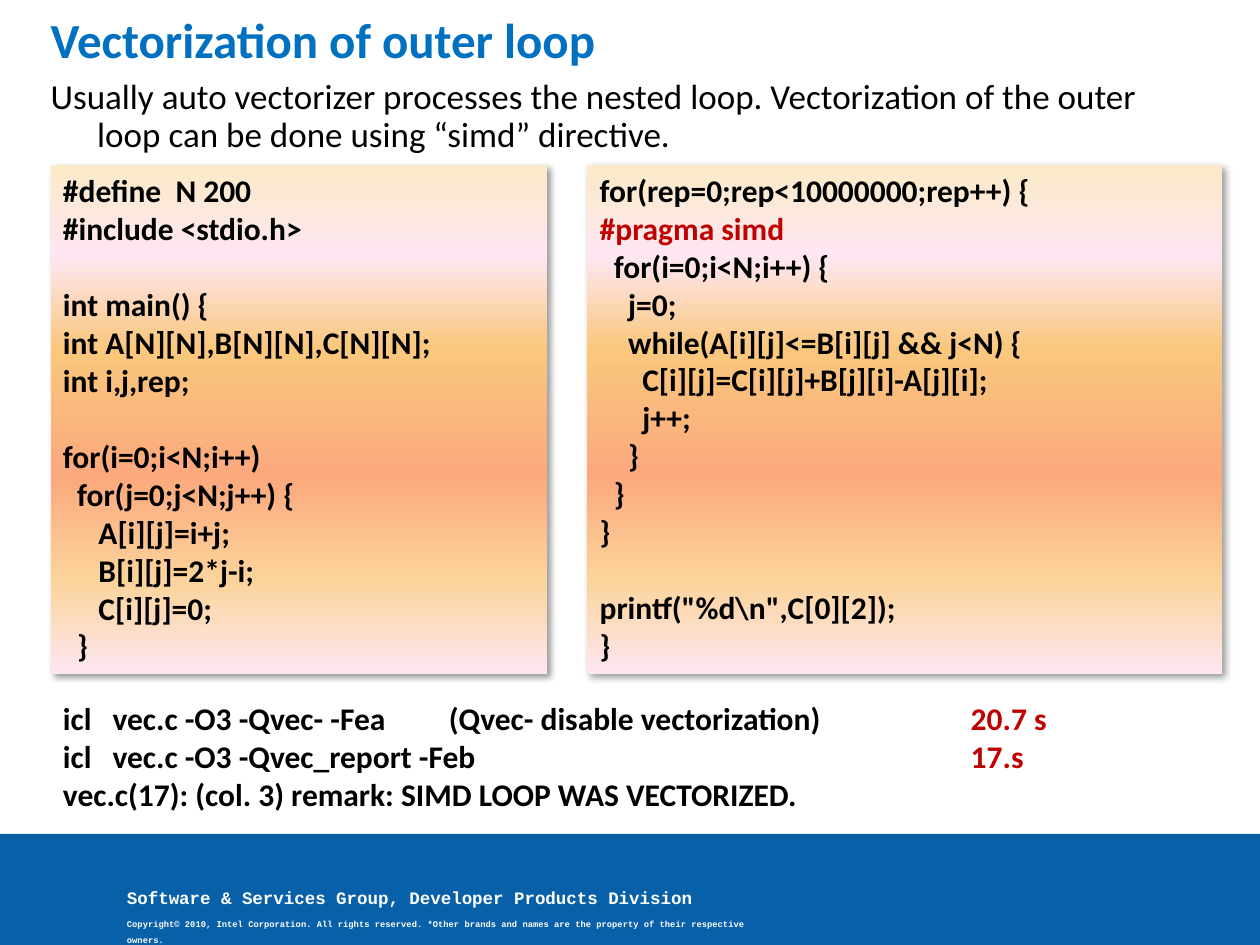
from dataclasses import dataclass

from lxml import etree
from pptx import Presentation
from pptx.dml.color import RGBColor
from pptx.enum.shapes import MSO_SHAPE
from pptx.enum.text import MSO_ANCHOR, MSO_AUTO_SIZE, PP_ALIGN
from pptx.oxml.ns import qn
from pptx.util import Cm, Pt

RECTANGLE = MSO_SHAPE.RECTANGLE
TOP = MSO_ANCHOR.TOP
LEFT = PP_ALIGN.LEFT
NO_FIT = MSO_AUTO_SIZE.NONE
GROW = MSO_AUTO_SIZE.SHAPE_TO_FIT_TEXT

COLORS = {
    "title": "0070C0",
    "text": "000000",
    "highlight": "C00000",
    "footer": "0860A8",
    "footer_text": "FFFFFF",
    "shadow": "000000",
}
GRADIENT = [(0, "FBEAC7"), (18, "FEE7F2"), (36, "FAC77D"),
            (61, "FBA97D"), (82, "FBD49C"), (100, "FEE7F2")]
MARGIN = Cm(1.02)
CODE_LINE = Pt(22)


@dataclass
class CodePanel:
    left: Cm
    width: Cm
    code: str


@dataclass
class Command:
    text: str
    timing: str = ""


SETUP_CODE = """#define  N 200
#include <stdio.h>

int main() {
int A[N][N],B[N][N],C[N][N];
int i,j,rep;

for(i=0;i<N;i++)
  for(j=0;j<N;j++) {
     A[i][j]=i+j;
     B[i][j]=2*j-i;
     C[i][j]=0;
  }"""
LOOP_CODE = r"""for(rep=0;rep<10000000;rep++) {
#pragma simd
  for(i=0;i<N;i++) {
    j=0;
    while(A[i][j]<=B[i][j] && j<N) {
      C[i][j]=C[i][j]+B[j][i]-A[j][i];
      j++;
    }
  }
}

printf("%d\n",C[0][2]);
}"""
PANELS = [
    CodePanel(MARGIN, Cm(10.01), SETUP_CODE),
    CodePanel(Cm(11.84), Cm(12.8), LOOP_CODE),
]
COMMANDS = [
    Command("icl\tvec.c -O3 -Qvec- -Fea\t(Qvec- disable vectorization)\t", "20.7 s"),
    Command("icl\tvec.c -O3 -Qvec_report -Feb\t", "17.s"),
    Command("vec.c(17): (col. 3) remark: SIMD LOOP WAS VECTORIZED."),
]
COMMAND_TABS = [Cm(1), Cm(7.78), Cm(18.3)]


def add_run(paragraph, text: str, *, size: float = 18, color: str = "text",
            bold: bool = True, font: str = "Calibri") -> None:
    run = paragraph.add_run()
    run.text = text
    run.font.size = Pt(size)
    run.font.name = font
    run.font.bold = bold
    run.font.color.rgb = RGBColor.from_string(COLORS[color])


def paragraph_at(frame, index: int):
    paragraph = frame.paragraphs[0] if index == 0 else frame.add_paragraph()
    paragraph.alignment = LEFT
    return paragraph


def place(shape, left: int, top: int, width: int, height: int) -> None:
    shape.left, shape.top, shape.width, shape.height = left, top, width, height


def fill_placeholder(placeholder, text: str, **text_format) -> None:
    frame = placeholder.text_frame
    frame.margin_left = frame.margin_right = frame.margin_top = frame.margin_bottom = 0
    frame.vertical_anchor = TOP
    frame.auto_size = NO_FIT
    frame.word_wrap = True
    paragraph = paragraph_at(frame, 0)
    paragraph.line_spacing = 0.9
    paragraph.space_before = Pt(0)
    properties = paragraph._p.get_or_add_pPr()
    properties.set("marL", str(Cm(0.94)))
    properties.set("indent", str(-Cm(0.94)))
    etree.SubElement(properties, qn("a:buNone"))
    add_run(paragraph, text, **text_format)


def add_color(parent, color: str):
    return etree.SubElement(parent, qn("a:srgbClr"), val=color)


def paint_panel(shape) -> None:
    shape.line.fill.background()
    shape.fill.gradient()
    shape.fill.gradient_angle = 270
    properties = shape._element.spPr
    stops = properties.find(".//" + qn("a:gsLst"))
    for stop in list(stops):
        stops.remove(stop)
    for percent, color in GRADIENT:
        add_color(etree.SubElement(stops, qn("a:gs"), pos=str(percent * 1000)), color)
    shape.shadow.inherit = False
    shadow = etree.SubElement(
        properties.find(qn("a:effectLst")), qn("a:outerShdw"),
        blurRad=str(Pt(4)), dist=str(Pt(3)), dir=str(45 * 60000),
        algn="tl", rotWithShape="0")
    etree.SubElement(add_color(shadow, COLORS["shadow"]), qn("a:alpha"), val="40000")


def add_code_panel(slide, panel: CodePanel) -> None:
    shape = slide.shapes.add_shape(RECTANGLE, panel.left, Cm(3.33), panel.width, Cm(10.26))
    paint_panel(shape)
    frame = shape.text_frame
    frame.word_wrap = True
    frame.vertical_anchor = TOP
    frame.auto_size = GROW
    index = 0
    for block_number, block in enumerate(panel.code.split("\n\n")):
        for line_number, line in enumerate(block.split("\n")):
            paragraph = paragraph_at(frame, index)
            if block_number and line_number == 0:
                paragraph.space_before = CODE_LINE
            add_run(paragraph, line,
                    color="highlight" if line.startswith("#pragma") else "text")
            index += 1


def add_commands(slide, commands: list[Command]) -> None:
    frame = slide.shapes.add_textbox(MARGIN, Cm(13.97), Cm(24.38), Cm(2.57)).text_frame
    frame.word_wrap = True
    frame.auto_size = GROW
    for index, command in enumerate(commands):
        paragraph = paragraph_at(frame, index)
        tabs = etree.SubElement(paragraph._p.get_or_add_pPr(), qn("a:tabLst"))
        for position in COMMAND_TABS:
            etree.SubElement(tabs, qn("a:tab"), pos=str(position), algn="l")
        add_run(paragraph, command.text)
        if command.timing:
            add_run(paragraph, command.timing, color="highlight")


def add_footer(slide) -> None:
    band = slide.shapes.add_shape(RECTANGLE, 0, Cm(16.81), Cm(25.4), Cm(2.24))
    band.shadow.inherit = False
    band.fill.solid()
    band.fill.fore_color.rgb = RGBColor.from_string(COLORS["footer"])
    band.line.fill.background()
    frame = slide.shapes.add_textbox(Cm(2.31), Cm(17.68), Cm(13.03), Cm(1.14)).text_frame
    frame.word_wrap = False
    lines = [
        ("Software & Services Group, Developer Products Division", 10, 1.2, 0),
        ("Copyright© 2010, Intel Corporation. All rights reserved. "
         "*Other brands and names are the property of their respective owners.", 5, 1.5, 3.1),
    ]
    for index, (text, size, spacing, before) in enumerate(lines):
        paragraph = paragraph_at(frame, index)
        paragraph.line_spacing = spacing
        paragraph.space_before = Pt(before)
        add_run(paragraph, text, size=size, color="footer_text", font="Courier New")


def main() -> None:
    deck = Presentation()
    deck.slide_width, deck.slide_height = Cm(25.4), Cm(19.05)
    slide = deck.slides.add_slide(deck.slide_layouts[1])
    add_footer(slide)
    title, intro = slide.shapes.title, slide.placeholders[1]
    place(title, MARGIN, Cm(0.33), Cm(22.81), Cm(1.14))
    place(intro, MARGIN, Cm(1.6), Cm(22.81), Cm(1.52))
    fill_placeholder(title, "Vectorization of outer loop", size=28, color="title")
    fill_placeholder(
        intro, "Usually auto vectorizer processes the nested loop. Vectorization of the "
        "outer loop can be done using “simd” directive.", size=20, bold=False)
    for panel in PANELS:
        add_code_panel(slide, panel)
    add_commands(slide, COMMANDS)
    deck.save("out.pptx")


if __name__ == "__main__":
    main()
